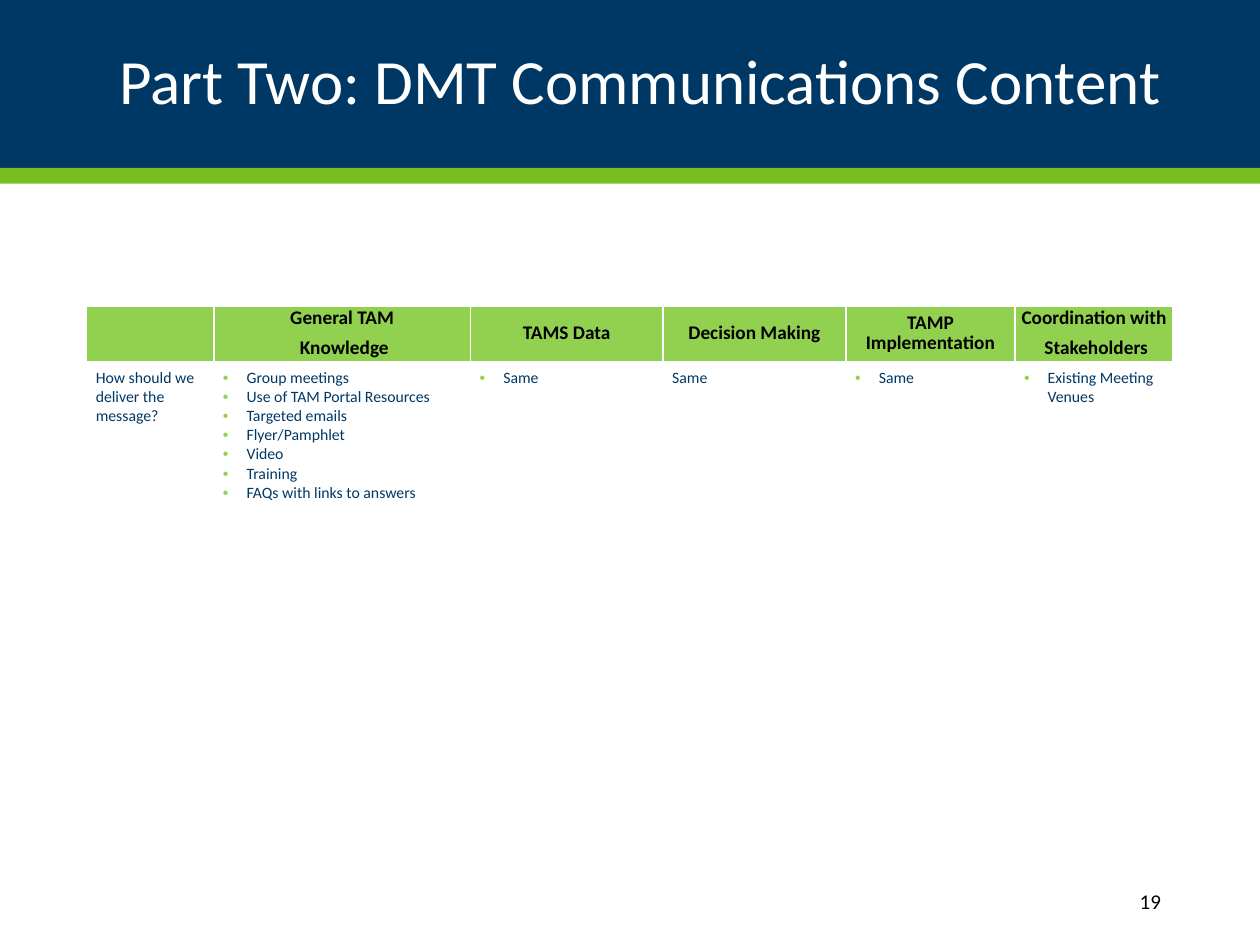
"""Build the slide on DMT communications content with its delivery table."""
from lxml import etree
from pptx import Presentation
from pptx.dml.color import RGBColor
from pptx.enum.shapes import MSO_SHAPE
from pptx.enum.text import MSO_ANCHOR, PP_ALIGN
from pptx.oxml.ns import qn
from pptx.util import Pt

RECT = MSO_SHAPE.RECTANGLE
MIDDLE, TOP = MSO_ANCHOR.MIDDLE, MSO_ANCHOR.TOP
LEFT, CENTER, RIGHT = PP_ALIGN.LEFT, PP_ALIGN.CENTER, PP_ALIGN.RIGHT
HUES = {"navy": "003865", "green": "78BE21", "lime": "92D050",
        "white": "FFFFFF", "black": "000000"}


def style(par, size, hue, align, bold=False):
    par.alignment = align
    for run in par.runs:
        font = run.font
        font.name, font.size, font.bold = "Calibri", Pt(size), bold
        font.color.rgb = RGBColor.from_string(HUES[hue])


def tint(parent, tag, hue):
    node = etree.SubElement(parent, qn(tag))
    etree.SubElement(node, qn("a:srgbClr"), val=HUES[hue])


deck = Presentation()
deck.slide_width, deck.slide_height = Pt(720), Pt(540)
slide = deck.slides.add_slide(deck.slide_layouts[6])

for top, height, hue in [(0, 96, "navy"), (96, 9, "green")]:
    band = slide.shapes.add_shape(RECT, 0, Pt(top), Pt(720), Pt(height))
    band.shadow.inherit = False
    band.fill.solid()
    band.fill.fore_color.rgb = RGBColor.from_string(HUES[hue])
    band.line.fill.background()

labels = [
    ("Part Two: DMT Communications Content", (49.5, 12, 621, 72), 36, "white", 0.9),
    ("19", (584, 500.5, 86.5, 28.75), 12, "black", 1),
]
for text, spot, size, hue, lead in labels:
    box = slide.shapes.add_textbox(*map(Pt, spot))
    frame = box.text_frame
    frame.word_wrap = True
    frame.vertical_anchor = MIDDLE
    frame.text = text
    frame.paragraphs[0].line_spacing = lead
    style(frame.paragraphs[0], size, hue, RIGHT)

heads = ["", "General TAM\n Knowledge", "TAMS Data", "Decision Making",
         "TAMP Implementation", "Coordination with\n Stakeholders"]
means = ["Group meetings", "Use of TAM Portal Resources", "Targeted emails",
         "Flyer/Pamphlet", "Video", "Training", "FAQs with links to answers"]
body = ["How should we deliver the message?", "\n".join(means), "Same", "Same",
        "Same", "Existing Meeting Venues"]
plain = (0, 3)
widths = [72.7, 146.7, 110, 104.6, 96.5, 90.5]
heights = [31, 91.5]

holder = slide.shapes.add_table(2, len(widths), Pt(49.5), Pt(175.25),
                                Pt(sum(widths)), Pt(sum(heights)))
table = holder.table
for col, width in zip(table.columns, widths):
    col.width = Pt(width)
for row, height in zip(table.rows, heights):
    row.height = Pt(height)

for r, texts in enumerate([heads, body]):
    head = r == 0
    for c, text in enumerate(texts):
        cell = table.cell(r, c)
        cell.margin_left = cell.margin_right = Pt(2.25 if head else 5.25)
        cell.margin_top = cell.margin_bottom = Pt(2.25 if head else 2.75)
        cell.vertical_anchor = MIDDLE if head else TOP
        for side in "LRTB":
            thick = 3 if (head and side == "B") or (r == 1 and side == "T") else 1
            edge = etree.SubElement(cell._tc.get_or_add_tcPr(), qn("a:ln" + side),
                                    w=str(Pt(thick)))
            tint(edge, "a:solidFill", "white")
        cell.fill.solid()
        cell.fill.fore_color.rgb = RGBColor.from_string(HUES["lime" if head else "white"])
        cell.text_frame.text = text
        for par in cell.text_frame.paragraphs:
            if head:
                style(par, 11, "black", CENTER, True)
                par.line_spacing, par.space_before = Pt(11), Pt(6)
                continue
            style(par, 9, "navy", LEFT)
            if c not in plain:
                props = par._p.get_or_add_pPr()
                props.set("marL", str(Pt(13.5)))
                props.set("indent", str(-Pt(13.5)))
                tint(props, "a:buClr", "lime")
                etree.SubElement(props, qn("a:buFont"), typeface="Arial")
                etree.SubElement(props, qn("a:buChar"), char="•")

deck.save("out.pptx")
